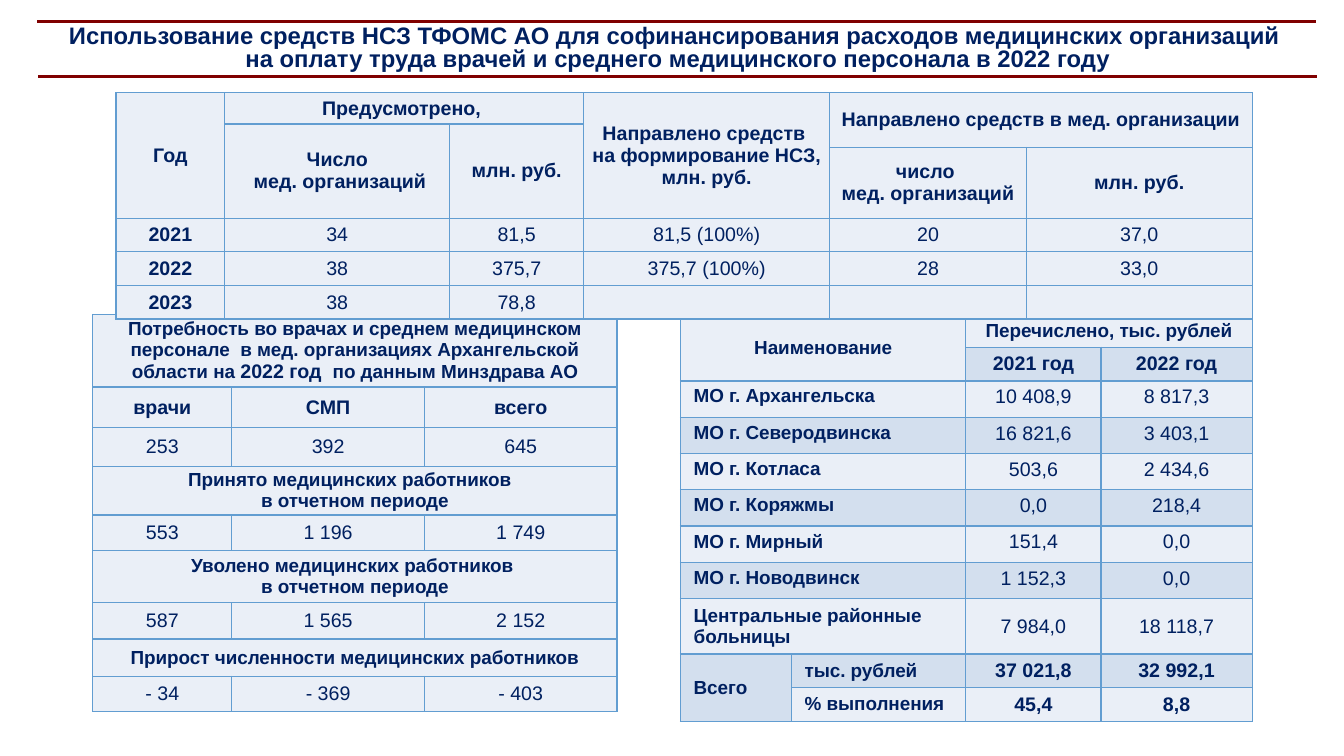
"""Builds the slide on the use of insurance reserve funds for medical staff pay."""
from lxml import etree
from pptx import Presentation
from pptx.dml.color import RGBColor
from pptx.enum.shapes import MSO_CONNECTOR
from pptx.enum.text import MSO_ANCHOR, PP_ALIGN
from pptx.oxml.ns import qn
from pptx.util import Inches, Pt

STRAIGHT = MSO_CONNECTOR.STRAIGHT
MIDDLE, TOP = MSO_ANCHOR.MIDDLE, MSO_ANCHOR.TOP
CENTER, LEFT = PP_ALIGN.CENTER, PP_ALIGN.LEFT
COLORS = {"text": "002060", "rule": "800000", "edge": "629DD1",
          "pale": "EAEFF7", "band": "D3DFEE"}
MARKS = {"#": (13.5, True), "*": (14, True)}

NEEDS = [
    ["#Потребность во врачах и среднем медицинском персонале  в мед. организациях "
     "Архангельской области на |2022 год  |по данным Минздрава АО", "", ""],
    ["*врачи", "*СМП", "*всего"],
    ["253", "392", "645"],
    ["#Принято медицинских работников  \vв отчетном периоде", "", ""],
    ["553", "1 196", "1 749"],
    ["#Уволено медицинских работников \vв отчетном периоде", "", ""],
    ["587", "1 565", "2 152"],
    ["#Прирост численности медицинских работников", "", ""],
    ["- 34", "- 369", "- 403"],
]
PAID = [
    ["#Наименование", "", "#Перечислено, тыс. рублей", ""],
    ["", "", "*2021 год", "*2022 год"],
    ["#МО г. Архангельска", "", "10 408,9", "8 817,3"],
    ["#МО г. Северодвинска", "", "16 821,6", "3 403,1"],
    ["#МО г. Котласа", "", "503,6", "2 434,6"],
    ["#МО г. Коряжмы", "", "0,0", "218,4"],
    ["#МО г. Мирный", "", "151,4", "0,0"],
    ["#МО г. Новодвинск", "", "1 152,3", "0,0"],
    ["#Центральные районные больницы", "", "7 984,0", "18 118,7"],
    ["#Всего", "#тыс. рублей", "*37 021,8", "*32 992,1"],
    ["", "#% выполнения", "*45,4", "*8,8"],
]
FUNDS = [
    ["*Год", "*Предусмотрено, ", "",
     "*Направлено средств \vна формирование НСЗ, млн. руб.",
     "*Направлено средств в мед. организации", ""],
    ["", "*Число\v мед. организаций", "*млн. руб.", "", "", ""],
    ["", "", "", "", "*число \vмед. организаций", "*млн. руб."],
    ["*2021", "34", "81,5", "81,5 (100%)", "20", "37,0"],
    ["*2022", "38", "375,7", "375,7 (100%)", "28", "33,0"],
    ["*2023", "38", "78,8", "", "", ""],
]


class Page:
    """Holds the style and the current slide."""

    def __init__(self, slide, face="Arial"):
        self.slide = slide
        self.face = face

    def color(self, name):
        return RGBColor.from_string(COLORS[name])

    def style(self, para, size, bold, align=CENTER):
        para.alignment = align
        font = para.font
        font.name, font.size, font.bold = self.face, Pt(size), bold
        font.color.rgb = self.color("text")

    def title(self, text, left, top, width, height):
        box = self.slide.shapes.add_textbox(*map(Inches, (left, top, width, height)))
        frame = box.text_frame
        frame.word_wrap = True
        frame.vertical_anchor = MIDDLE
        para = frame.paragraphs[0]
        para.text = text
        para.line_spacing = 0.8
        self.style(para, 17, True)

    def rule(self, left, top, width):
        line = self.slide.shapes.add_connector(
            STRAIGHT, *map(Inches, (left, top, left + width, top)))
        line.line.color.rgb = self.color("rule")
        line.line.width = Pt(2.25)
        etree.SubElement(line._element.spPr, qn("a:effectLst"))

    def edges(self, cell):
        props = cell._tc.get_or_add_tcPr()
        for side in ("L", "R", "T", "B"):
            line = etree.SubElement(props, qn("a:ln" + side), w=str(Pt(1)))
            fill = etree.SubElement(line, qn("a:solidFill"))
            etree.SubElement(fill, qn("a:srgbClr"), val=COLORS["edge"])

    def label(self, cell, text, align):
        para = cell.text_frame.paragraphs[0]
        size, bold = MARKS.get(text[:1], (14, False))
        text = text.lstrip("#*")
        parts = text.split("|")
        if not text:
            para._p.get_or_add_endParaRPr().set("sz", "1400")
        elif len(parts) == 1:
            para.text = text
        else:
            for i, part in enumerate(parts):
                run = para.add_run()
                run.text = part
                run.font.size = Pt(14 if i % 2 else size)
        self.style(para, size, bold, align)

    def table(self, data, left, top, cols, rows, spans, pad,
              band=False, names=0, high=()):
        shape = self.slide.shapes.add_table(
            len(rows), len(cols), *map(Inches, (left, top, sum(cols), sum(rows))))
        grid = shape.table
        grid.first_row = grid.horz_banding = False
        for col, width in zip(grid.columns, cols):
            col.width = Inches(width)
        for row, height in zip(grid.rows, rows):
            row.height = Inches(height)
        for r, texts in enumerate(data):
            for c, text in enumerate(texts):
                cell = grid.cell(r, c)
                cell.margin_left = cell.margin_right = Inches(pad[0])
                cell.margin_top = cell.margin_bottom = Inches(pad[1])
                cell.vertical_anchor = TOP if r in high else MIDDLE
                self.edges(cell)
                cell.fill.solid()
                cell.fill.fore_color.rgb = self.color("band" if band and r % 2 else "pale")
                self.label(cell, text, LEFT if r > 1 and c < names else CENTER)
        for r, c, down, across in spans:
            grid.cell(r, c).merge(grid.cell(r + down - 1, c + across - 1))


def main():
    deck = Presentation()
    deck.slide_width, deck.slide_height = Inches(13.33), Inches(7.5)
    page = Page(deck.slides.add_slide(deck.slide_layouts[6]))
    page.title("Использование средств НСЗ ТФОМС АО для софинансирования расходов "
               "медицинских организаций \vна оплату труда врачей и среднего "
               "медицинского персонала в 2022 году", 0.37, 0.21, 12.71, 0.55)
    page.table(NEEDS, 0.92, 3.12, [1.38, 1.91, 1.91],
               [0.72, 0.4, 0.39, 0.48, 0.35, 0.52, 0.36, 0.37, 0.35],
               [(r, 0, 1, 3) for r in (0, 3, 5, 7)], (0.08, 0))
    page.table(PAID, 6.75, 3.12, [1.1, 1.73, 1.34, 1.5],
               [0.32] * 2 + [0.36] * 6 + [0.52] + [0.32] * 2,
               [(0, 0, 2, 2), (0, 2, 1, 2), (9, 0, 2, 1)]
               + [(r, 0, 1, 2) for r in range(2, 9)],
               (0.13, 0.05), band=True, names=2, high=range(2, 8))
    page.table(FUNDS, 1.15, 0.92, [1.08, 2.23, 1.33, 2.44, 1.95, 2.24],
               [0.31, 0.22, 0.65, 0.33, 0.34, 0.33],
               [(0, 0, 3, 1), (0, 1, 1, 2), (0, 3, 3, 1), (0, 4, 2, 2),
                (1, 1, 2, 1), (1, 2, 2, 1)], (0.08, 0))
    for left, top in ((0.37, 0.21), (0.38, 0.76)):
        page.rule(left, top, 12.68)
    deck.save("out.pptx")


if __name__ == "__main__":
    main()
